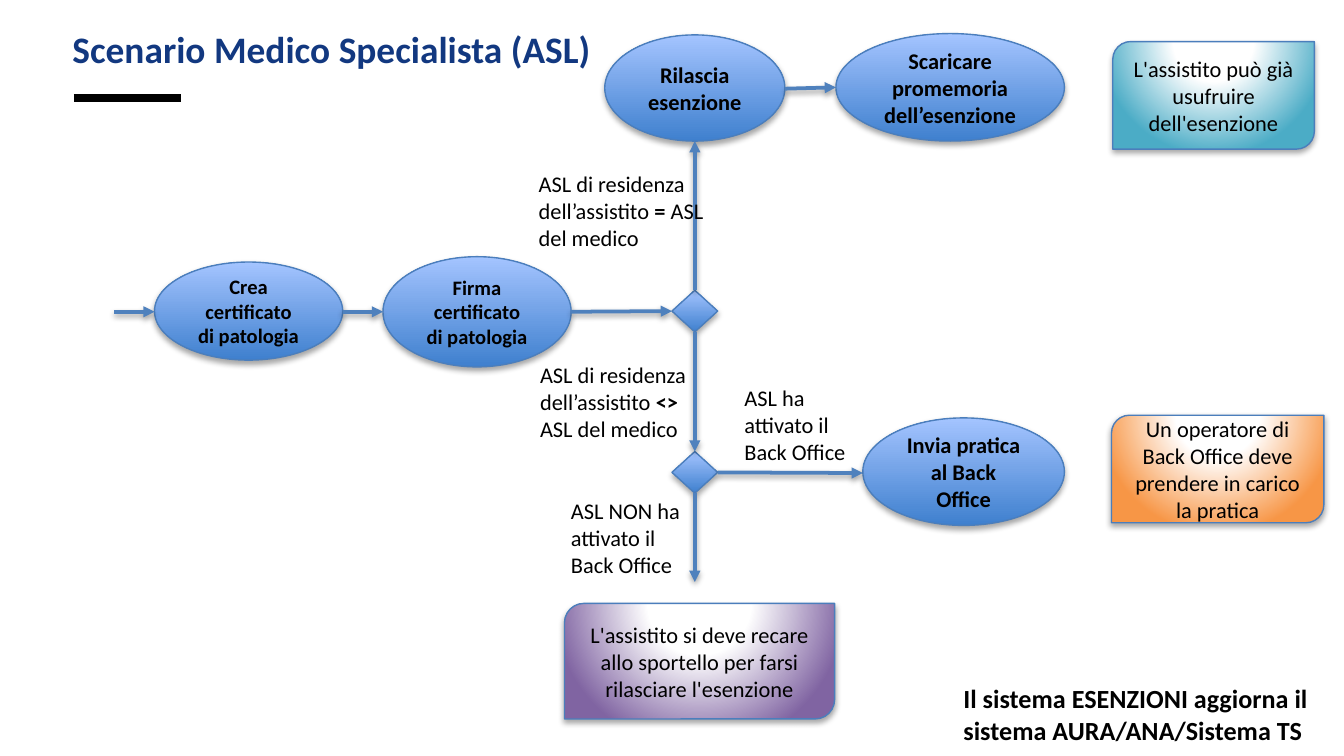
from dataclasses import dataclass

from lxml.etree import SubElement
from pptx import Presentation
from pptx.dml.color import RGBColor
from pptx.enum.shapes import MSO_CONNECTOR as Connector, MSO_SHAPE as Shape
from pptx.enum.text import MSO_ANCHOR as Anchor, PP_ALIGN as Align
from pptx.oxml import parse_xml
from pptx.oxml.ns import nsdecls, qn
from pptx.util import Pt

PX = 9144
SLIDE_WIDTH = 1000 * PX
SLIDE_HEIGHT = SLIDE_WIDTH * 9 // 16
TOP, LEFT, BOTTOM, RIGHT = range(4)


@dataclass(frozen=True)
class Theme:
    """Colours, font and type sizes of the flow chart."""
    font: str = "Calibri"
    ink: str = "000000"
    title: str = "123880"
    arrow: str = "4F81BD"
    outline: str = "4B7EBC"
    step_low: str = "3F80CE"
    step_high: str = "A4C4FF"
    paper: str = "FFFFFF"
    done: str = "4BACC6"
    office: str = "F79646"
    counter: str = "8064A2"
    title_size: int = 20
    footer_size: int = 14
    body_size: int = 12
    small_size: int = 11


THEME = Theme()


def px(*lengths):
    """Turn px lengths into EMU."""
    return [length * PX for length in lengths]


def apply_format(target, **values):
    """Set each given value as an attribute of the target."""
    for name, value in values.items():
        setattr(target, name, value)


def add_shadow(shape, distance, opacity):
    """Give a shape a soft shadow that falls straight down."""
    shape._element.spPr.append(parse_xml(
        f'<a:effectLst {nsdecls("a")}><a:outerShdw blurRad="40000" dist="{distance}" '
        f'dir="5400000" rotWithShape="0"><a:srgbClr val="{THEME.ink}">'
        f'<a:alpha val="{opacity}000"/></a:srgbClr></a:outerShdw></a:effectLst>'))


def add_gradient(shape, stops, direction):
    """Fill a shape with gradient stops along the given direction."""
    colours = "".join(f'<a:gs pos="{position}000"><a:srgbClr val="{colour}"/></a:gs>'
                      for position, colour in stops)
    shape._element.spPr.append(parse_xml(
        f'<a:gradFill {nsdecls("a")} rotWithShape="1"><a:gsLst>{colours}</a:gsLst>'
        f'{direction}</a:gradFill>'))


def set_text(shape, runs, size, colour=THEME.ink, align=Align.LEFT, anchor=Anchor.TOP):
    """Write (text, bold) runs as one paragraph of a shape."""
    apply_format(shape.text_frame, word_wrap=True, vertical_anchor=anchor)
    paragraph = shape.text_frame.paragraphs[0]
    paragraph.alignment = align
    for text, bold in runs:
        run = paragraph.add_run()
        run.text = text
        apply_format(run.font, name=THEME.font, size=Pt(size), bold=bold)
        run.font.color.rgb = RGBColor.from_string(colour)


def add_label(slide, box, runs, size=THEME.body_size, **text_format):
    """Add a wrapped text box."""
    set_text(slide.shapes.add_textbox(*px(*box)), runs, size, **text_format)


def add_node(slide, kind, box, stops, direction):
    """Add an outlined gradient shape with a shadow."""
    shape = slide.shapes.add_shape(kind, *px(*box))
    add_gradient(shape, stops, direction)
    shape.line.color.rgb = RGBColor.from_string(THEME.outline)
    shape.line.width = Pt(0.75)
    add_shadow(shape, 23000, 35)
    return shape


def add_blue_node(slide, kind, box):
    """Add a node with the blue vertical gradient."""
    return add_node(slide, kind, box, [(0, THEME.step_low), (100, THEME.step_high)],
                    '<a:lin ang="16200000" scaled="0"/>')


def add_step(slide, box, text, size=THEME.body_size):
    """Add an ellipse for a process step."""
    shape = add_blue_node(slide, Shape.OVAL, box)
    set_text(shape, [(text, True)], size, align=Align.CENTER, anchor=Anchor.MIDDLE)


def add_outcome(slide, box, text, colour):
    """Add a card with a light glow for an outcome."""
    shape = add_node(slide, Shape.ROUND_2_DIAG_RECTANGLE, box,
                     [(0, THEME.paper), (35, THEME.paper), (100, colour)],
                     '<a:path path="circle"><a:fillToRect l="50000" t="-80000" '
                     'r="50000" b="180000"/></a:path>')
    set_text(shape, [(text, False)], THEME.body_size, align=Align.CENTER, anchor=Anchor.MIDDLE)


def add_line(slide, start, end, colour, width):
    """Add a straight line without effects of its own."""
    line = slide.shapes.add_connector(Connector.STRAIGHT, *px(*start, *end))
    line.line.color.rgb = RGBColor.from_string(colour)
    line.line.width = Pt(width)
    return line


def add_arrow(slide, start, end, source=None, target=None):
    """Add an arrow, joined to (shape, side) pairs where given."""
    arrow = add_line(slide, start, end, THEME.arrow, 2)
    SubElement(arrow.line._get_or_add_ln(), qn("a:tailEnd"), type="triangle")
    add_shadow(arrow, 20000, 38)
    if source:
        arrow.begin_connect(*source)
    if target:
        arrow.end_connect(*target)


def main():
    """Build the slide and save it."""
    presentation = Presentation()
    apply_format(presentation, slide_width=SLIDE_WIDTH, slide_height=SLIDE_HEIGHT)
    slide = presentation.slides.add_slide(presentation.slide_layouts[6])

    rule = add_line(slide, (55, 73), (135, 73), THEME.ink, 4)
    SubElement(rule._element.spPr, qn("a:effectLst"))
    add_label(slide, (44, 0, 901, 73), [("Scenario Medico Specialista (ASL)", True)],
              THEME.title_size, colour=THEME.title, anchor=Anchor.MIDDLE)

    for box, text, size in (
        ((115, 195, 140, 73), "Crea certificato di patologia", THEME.small_size),
        ((285, 191, 140, 82), "Firma certificato di patologia", THEME.small_size),
        ((450, 26, 134, 79), "Rilascia esenzione", THEME.body_size),
        ((622, 25, 170, 80), "Scaricare promemoria dell’esenzione", THEME.body_size),
        ((642, 311, 150, 80), "Invia pratica al Back Office", THEME.body_size),
    ):
        add_step(slide, box, text, size)

    residence, back_office = [add_blue_node(slide, Shape.FLOWCHART_DECISION, (500, top, 34, 31))
                              for top in (216, 336)]
    for start, end, source, target in (
        ((85, 232), (115, 232), None, None),
        ((255, 232), (285, 232), None, None),
        ((425, 232), (500, 232), None, (residence, LEFT)),
        ((517, 216), (517, 105), (residence, TOP), None),
        ((584, 66), (622, 65), None, None),
        ((517, 247), (517, 336), (residence, BOTTOM), (back_office, TOP)),
        ((534, 352), (642, 352), (back_office, RIGHT), None),
        ((517, 367), (517, 433), (back_office, BOTTOM), None),
    ):
        add_arrow(slide, start, end, source, target)

    for box, runs in (
        ((391, 122, 143, 71), [("ASL di residenza dell’assistito ", False), ("= ", True),
                               ("ASL del medico", False)]),
        ((392, 264, 143, 71), [("ASL di residenza dell’assistito ", False), ("<>", True),
                               (" ASL del medico", False)]),
        ((544, 281, 102, 71), [("ASL ha attivato il Back Office", False)]),
        ((415, 365, 102, 71), [("ASL NON ha attivato il Back Office", False)]),
    ):
        add_label(slide, box, runs)

    for box, text, colour in (
        ((828, 31, 150, 80), "L'assistito può già usufruire dell'esenzione", THEME.done),
        ((827, 309, 158, 80), "Un operatore di Back Office deve prendere in carico la pratica",
         THEME.office),
        ((420, 449, 201, 86),
         "L'assistito si deve recare allo sportello per farsi rilasciare l'esenzione",
         THEME.counter),
    ):
        add_outcome(slide, box, text, colour)

    add_label(slide, (707, 503, 293, 57),
              [("Il sistema ESENZIONI aggiorna il sistema AURA/ANA/Sistema TS", True)],
              THEME.footer_size)
    presentation.save("out.pptx")


if __name__ == "__main__":
    main()
